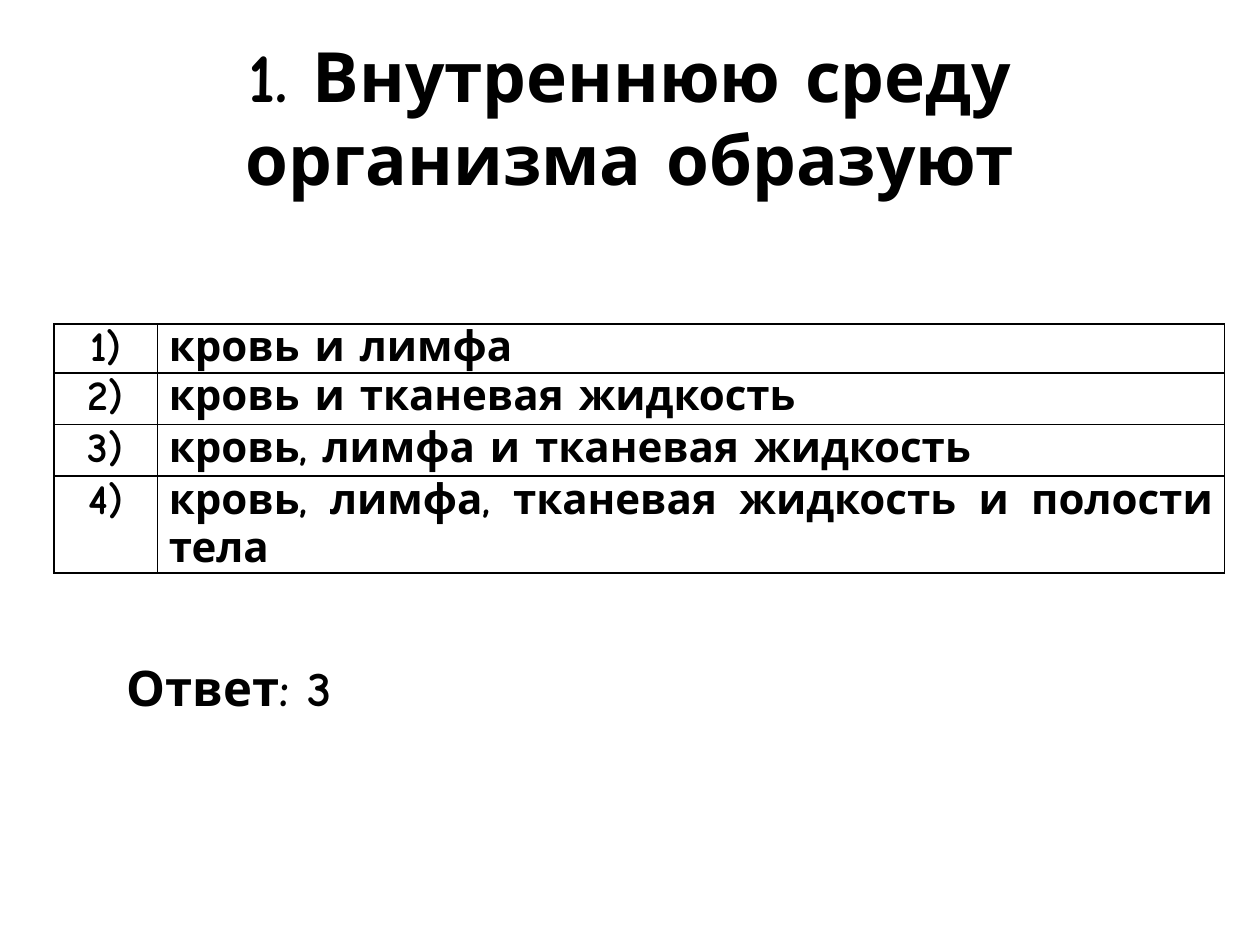
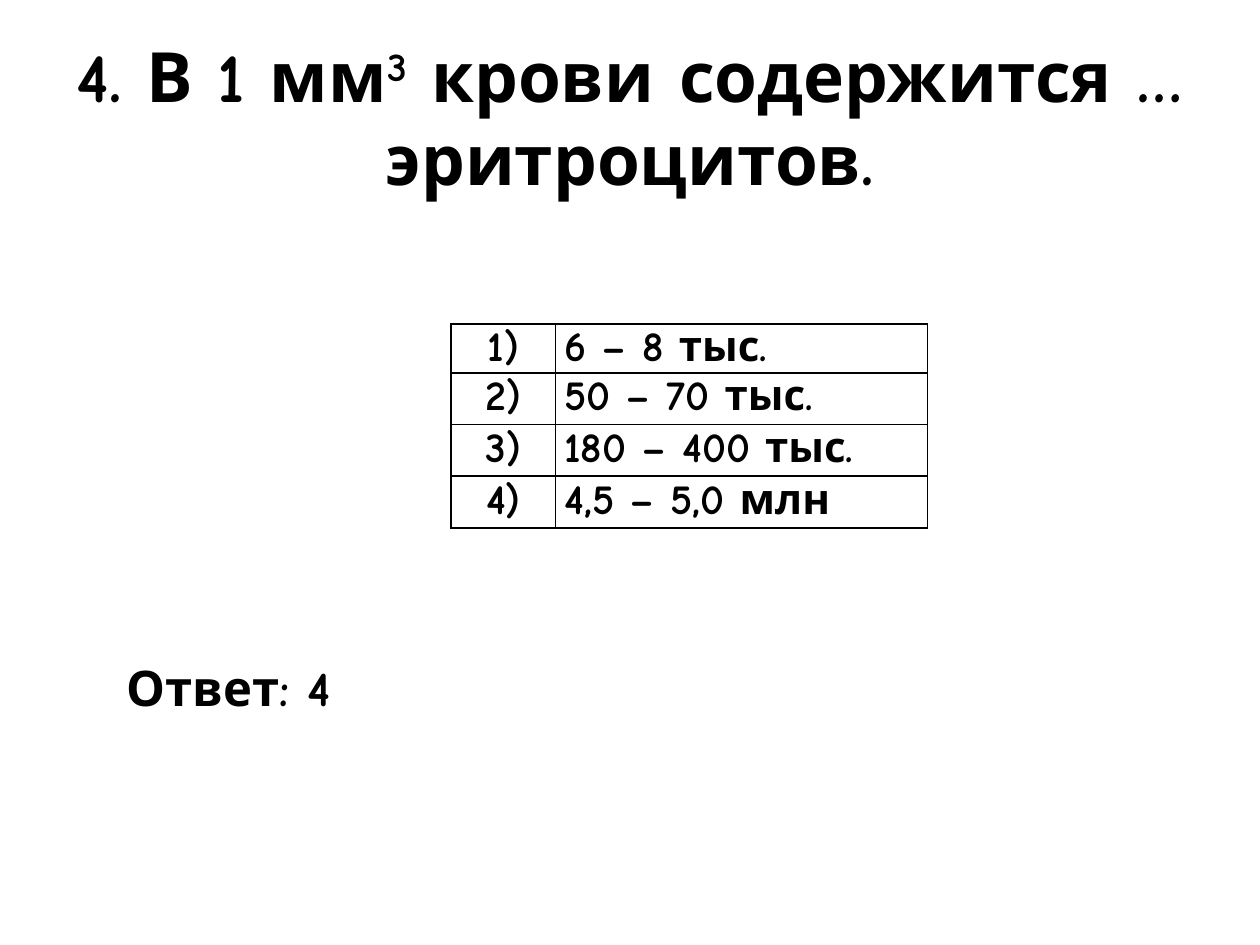
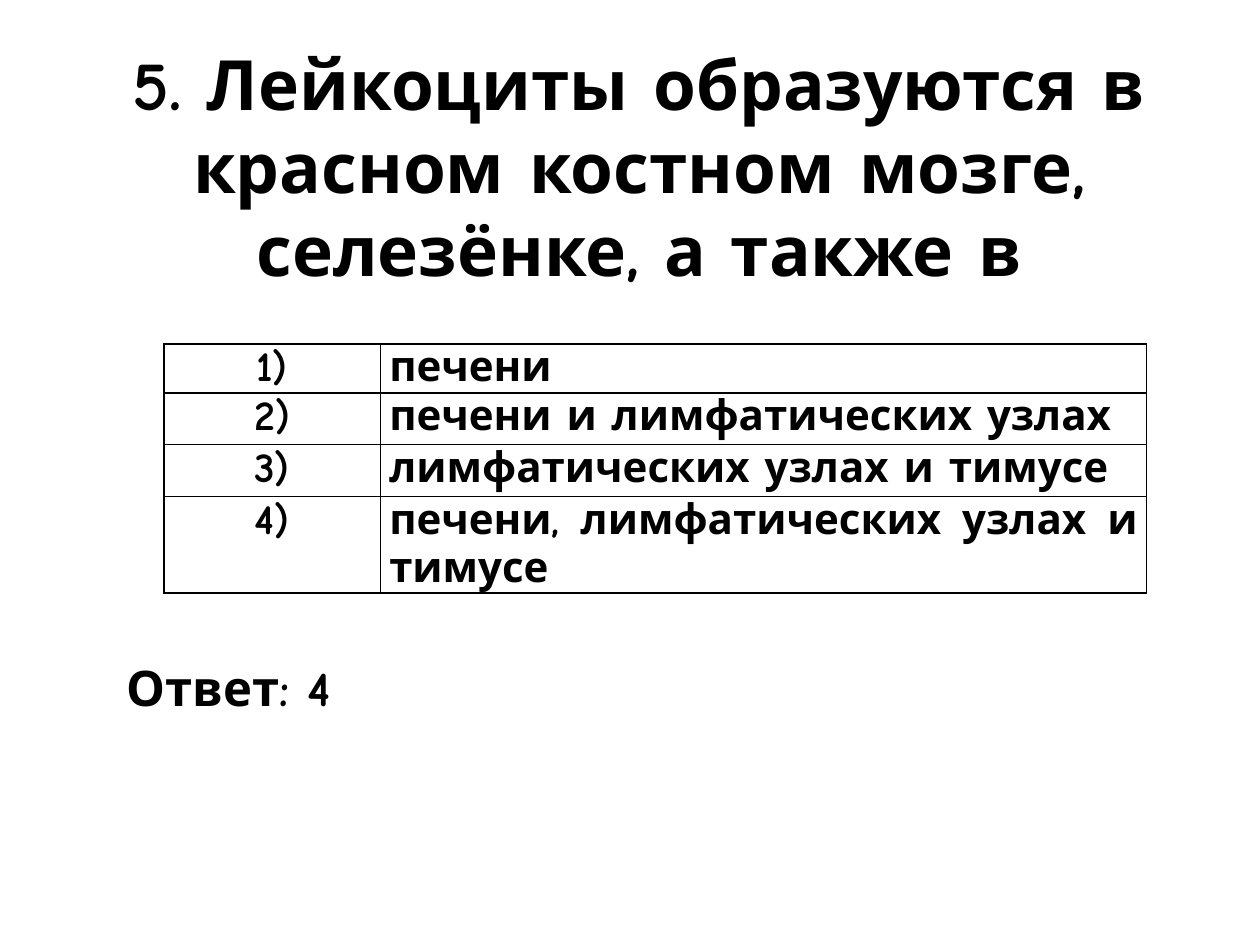
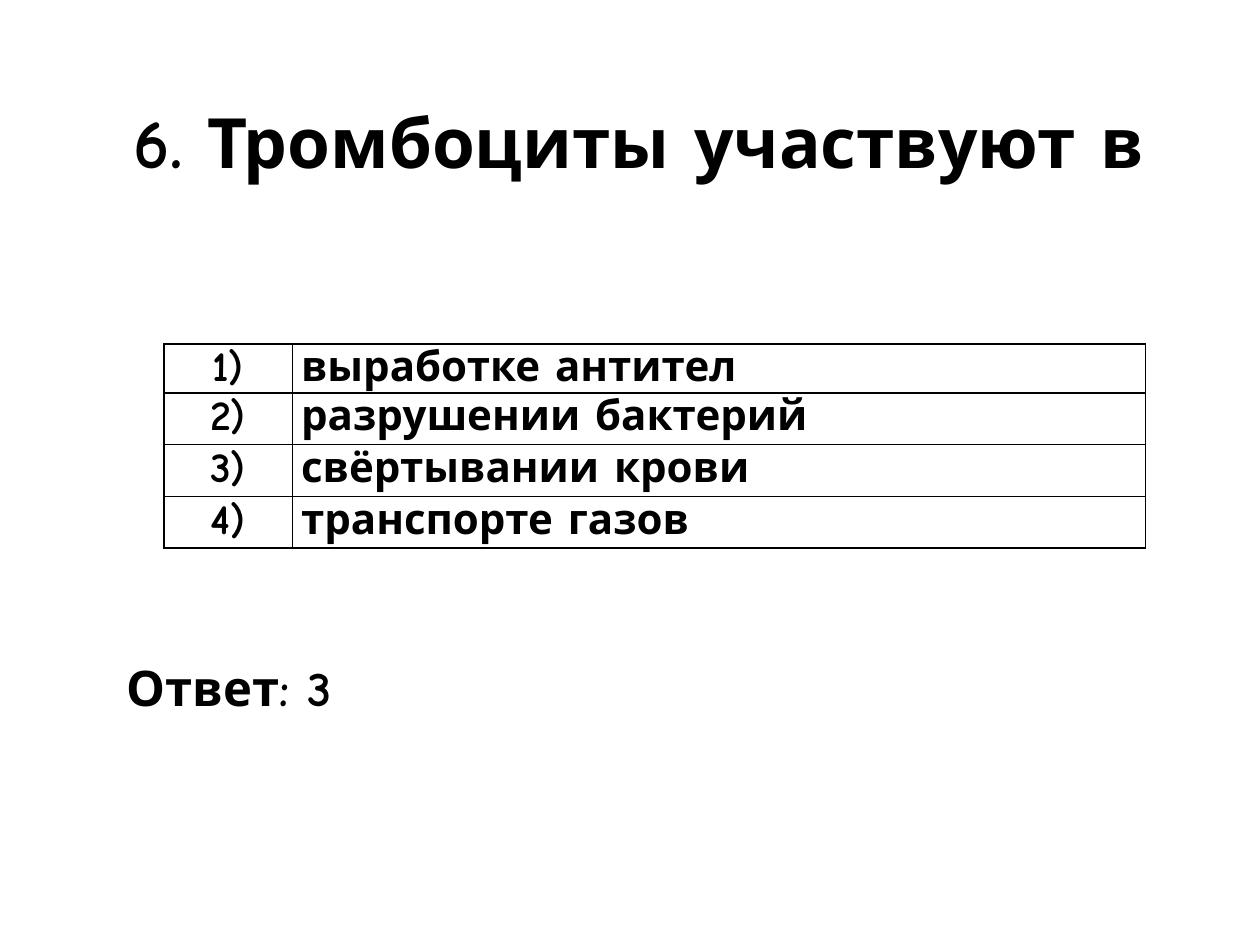
from lxml.etree import SubElement
from pptx import Presentation
from pptx.dml.color import RGBColor
from pptx.enum.text import MSO_ANCHOR, MSO_AUTO_SIZE, PP_ALIGN
from pptx.oxml.ns import qn
from pptx.util import Inches, Pt

SLIDE_W, SLIDE_H = Inches(10), Inches(7.5)
COLS, ROWS = 100, 75
COL, ROW = SLIDE_W / COLS, SLIDE_H / ROWS
FONT, BLACK = "Comic Neue", "000000"
ROW_HEIGHTS = (3.9, 4.1, 4.1, 4.1)
ANSWER_BOX = (9.1, 51.7, 28.3, 5.7)

QUESTIONS = [
    {"title": [("1. Внутреннюю среду организма образуют", 0)],
     "title_box": (5, 3, 90, 12.5),
     "table_at": (4.3, 25.7), "widths": (8.2, 84.7), "inset": 0.09,
     "options": ["кровь и лимфа", "кровь и тканевая жидкость",
                 "кровь, лимфа и тканевая жидкость",
                 "кровь, лимфа, тканевая жидкость и полости тела"],
     "answer": 3},
    {"title": [("4. В 1 мм", 0), ("3", 30),
               (" крови содержится … эритроцитов.", 0)],
     "title_box": (5, 3, 90, 12.5),
     "table_at": (35.8, 25.7), "widths": (8.3, 29.5), "inset": 0.07,
     "options": ["6 – 8 тыс.", "50 – 70 тыс.", "180 – 400 тыс.",
                 "4,5 – 5,0 млн"],
     "answer": 4},
    {"title": [("5. Лейкоциты образуются в красном костном мозге, "
                "селезёнке, а также в", 0)],
     "title_box": (5, 3, 91.5, 20.3),
     "table_at": (13, 27.3), "widths": (17.2, 60.8), "inset": 0.07,
     "options": ["печени", "печени и лимфатических узлах",
                 "лимфатических узлах и тимусе",
                 "печени, лимфатических узлах и тимусе"],
     "answer": 4},
    {"title": [("6. Тромбоциты участвуют в", 0)],
     "title_box": (5, 3, 91.5, 16.4),
     "table_at": (13, 27.3), "widths": (10.2, 67.7), "inset": 0.07,
     "options": ["выработке антител", "разрушении бактерий",
                 "свёртывании крови", "транспорте газов"],
     "answer": 3},
]


def color(value):
    return RGBColor.from_string(value)


def place(box):
    x, y, w, h = box
    return [int(v) for v in (x * COL, y * ROW, w * COL, h * ROW)]


def set_attrs(obj, values):
    for name, value in values.items():
        setattr(obj, name, value)


def add_run(p, text, size, baseline=0):
    r = p.add_run()
    r.text = text
    set_attrs(r.font, {"name": FONT, "size": Pt(size), "bold": True})
    r.font.color.rgb = color(BLACK)
    if baseline:
        r._r.get_or_add_rPr().set("baseline", str(baseline * 1000))


def add_title(s, box, parts):
    sp = s.shapes.title
    set_attrs(sp, dict(zip(("left", "top", "width", "height"), place(box))))
    tf = sp.text_frame
    set_attrs(tf, {"auto_size": MSO_AUTO_SIZE.NONE, "word_wrap": True,
                   "vertical_anchor": MSO_ANCHOR.MIDDLE})
    p = tf.paragraphs[0]
    p.alignment = PP_ALIGN.CENTER
    for text, baseline in parts:
        add_run(p, text, 39.6, baseline)


def add_borders(cell):
    tcPr = cell._tc.get_or_add_tcPr()
    for side in ("a:lnL", "a:lnR", "a:lnT", "a:lnB"):
        ln = SubElement(tcPr, qn(side), w=str(Pt(1)))
        fill = SubElement(ln, qn("a:solidFill"))
        SubElement(fill, qn("a:srgbClr"), val=BLACK)


def fill_cell(cell, text, align, inset):
    set_attrs(cell, {"margin_left": Inches(inset), "margin_right": Inches(inset),
                     "margin_top": 0, "margin_bottom": 0})
    add_borders(cell)
    cell.fill.background()
    p = cell.text_frame.paragraphs[0]
    p.alignment = align
    add_run(p, text, 24)


def add_options(s, at, widths, inset, options):
    box = (*at, sum(widths), sum(ROW_HEIGHTS))
    table = s.shapes.add_table(len(options), 2, *place(box)).table
    set_attrs(table, {"first_row": False, "horz_banding": False})
    for column, width in zip(table.columns, widths):
        column.width = int(width * COL)
    for i, (option, height) in enumerate(zip(options, ROW_HEIGHTS)):
        table.rows[i].height = int(height * ROW)
        fill_cell(table.cell(i, 0), f"{i + 1})", PP_ALIGN.CENTER, 0.09)
        fill_cell(table.cell(i, 1), option, PP_ALIGN.JUSTIFY, inset)


def add_answer(s, box, number):
    tf = s.shapes.add_textbox(*place(box)).text_frame
    set_attrs(tf, {"word_wrap": True,
                   "auto_size": MSO_AUTO_SIZE.SHAPE_TO_FIT_TEXT})
    p = tf.paragraphs[0]
    p.alignment = PP_ALIGN.JUSTIFY
    add_run(p, f"Ответ: {number}", 28)


def add_question(prs, q):
    s = prs.slides.add_slide(prs.slide_layouts[5])
    add_title(s, q["title_box"], q["title"])
    add_options(s, q["table_at"], q["widths"], q["inset"], q["options"])
    add_answer(s, ANSWER_BOX, q["answer"])


def main():
    prs = Presentation()
    set_attrs(prs, {"slide_width": SLIDE_W, "slide_height": SLIDE_H})
    for q in QUESTIONS:
        add_question(prs, q)
    prs.save("out.pptx")


if __name__ == "__main__":
    main()
